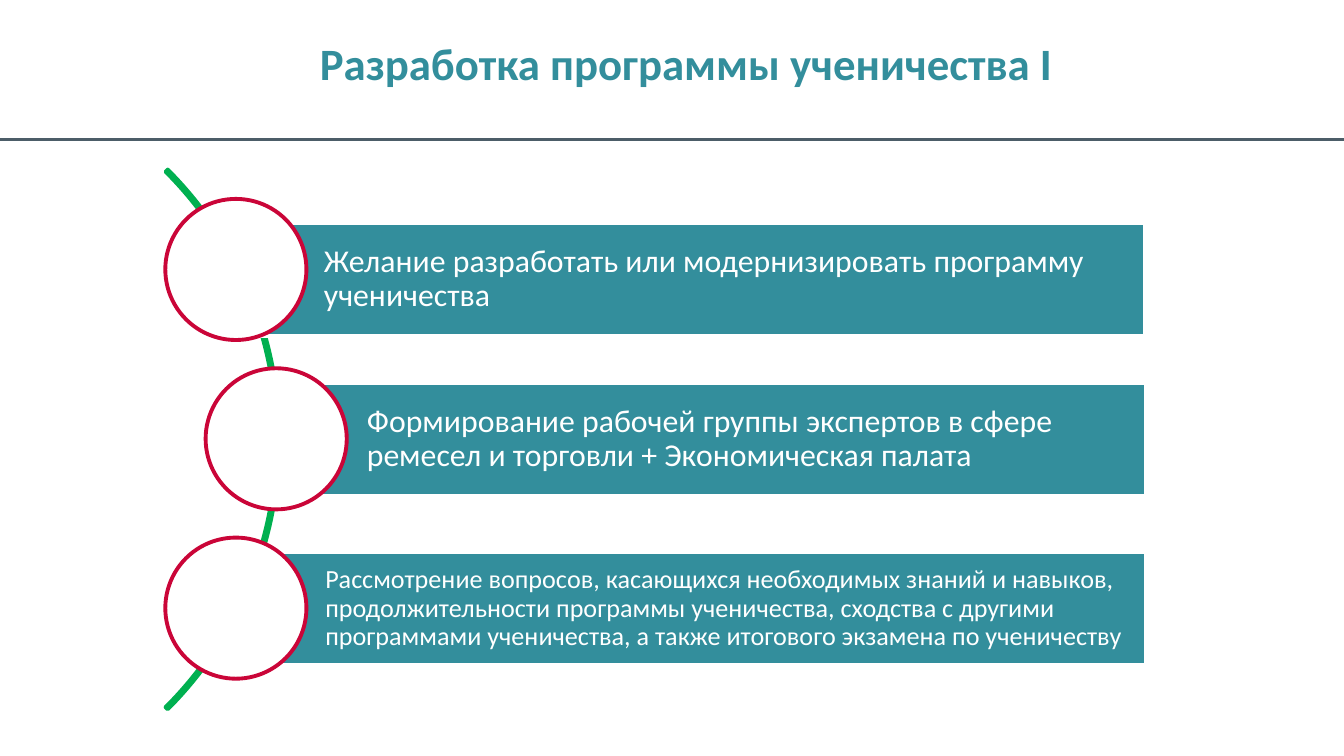
from pptx import Presentation, util as u
from pptx.dml.color import RGBColor
from pptx.enum import shapes, text
from pptx.oxml.ns import qn
from lxml import etree


def rgb(value):
    return RGBColor.from_string(value)


class SlideBuilder:
    FONT = "Calibri"
    TEAL, WHITE, RED, GREEN, GREY = "338E9C", "FFFFFF", "CA0538", "00B050", "4C5D68"
    OUTLINE = 2.08

    def __init__(self, slide):
        self.slide = slide

    def set_font(self, paragraph, size, color, bold=False):
        font = paragraph.font
        font.name, font.size, font.bold = self.FONT, u.Pt(size), bold
        font.color.rgb = rgb(color)

    def title(self, wording, left, top, width, height):
        heading = self.slide.shapes.title
        heading.left, heading.top = u.Inches(left), u.Inches(top)
        heading.width, heading.height = u.Inches(width), u.Inches(height)
        frame = heading.text_frame
        frame.text = wording
        frame.word_wrap = False
        frame.auto_size = text.MSO_AUTO_SIZE.NONE
        frame.vertical_anchor = text.MSO_ANCHOR.TOP
        frame.margin_left = frame.margin_right = 0
        frame.margin_top = frame.margin_bottom = 0
        paragraph = frame.paragraphs[0]
        paragraph.alignment = text.PP_ALIGN.LEFT
        paragraph.line_spacing = u.Pt(30)
        self.set_font(paragraph, 24, self.TEAL, bold=True)

    def rule(self, y):
        """Draw a horizontal line across the slide."""
        line = self.slide.shapes.add_connector(
            shapes.MSO_CONNECTOR.STRAIGHT,
            u.Inches(10), u.Inches(y), u.Inches(0), u.Inches(y))
        line.line.color.rgb = rgb(self.GREY)
        line.line.width = u.Pt(1.5)
        etree.SubElement(line._element.spPr, qn("a:effectLst"))

    def shape(self, kind, left, top, width, height, fill, outline):
        item = self.slide.shapes.add_shape(
            kind, u.Inches(left), u.Inches(top), u.Inches(width), u.Inches(height))
        item.shadow.inherit = False
        if fill:
            item.fill.solid()
            item.fill.fore_color.rgb = rgb(fill)
        else:
            item.fill.background()
        item.line.color.rgb = rgb(outline)
        item.line.width = u.Pt(self.OUTLINE)
        return item

    def arc(self, left, top, diameter):
        arc = self.shape(shapes.MSO_SHAPE.BLOCK_ARC, left, top, diameter, diameter,
                         None, self.GREEN)
        # Start angle, end angle (315 and 45 degrees) and band thickness
        for index, value in enumerate((189, 27, 0.004)):
            arc.adjustments[index] = value

    def bar(self, wording, left, top, width, size, margin):
        bar = self.shape(shapes.MSO_SHAPE.RECTANGLE, left, top, width, 0.84,
                         self.TEAL, self.WHITE)
        frame = bar.text_frame
        frame.text = wording
        frame.word_wrap = True
        frame.vertical_anchor = text.MSO_ANCHOR.MIDDLE
        frame.margin_left = u.Inches(0.67)
        frame.margin_right = frame.margin_top = frame.margin_bottom = u.Inches(margin)
        paragraph = frame.paragraphs[0]
        paragraph.alignment = text.PP_ALIGN.LEFT
        paragraph.line_spacing = 0.9
        self.set_font(paragraph, size, self.WHITE)

    def circle(self, left, top):
        self.shape(shapes.MSO_SHAPE.OVAL, left, top, 1.05, 1.05, self.WHITE, self.RED)


# Wording, bar left, bar top, bar width, text size, margin, circle left
STEPS = [
    ("Желание разработать или модернизировать программу ученичества",
     1.74, 1.66, 6.78, 17, 0.05, 1.23),
    ("Формирование рабочей группы экспертов в сфере ремесел и торговли "
     "+ Экономическая палата",
     2.06, 2.85, 6.47, 17, 0.05, 1.53),
    ("Рассмотрение вопросов, касающихся необходимых знаний и навыков, "
     "продолжительности программы ученичества, сходства с другими программами "
     "ученичества, а также итогового экзамена по ученичеству",
     1.75, 4.11, 6.78, 14, 0.04, 1.23),
]
CIRCLE_TOP, CIRCLE_MIDDLE_TOP = 1.48, 2.74
CIRCLE_STEP = CIRCLE_MIDDLE_TOP - CIRCLE_TOP


def main():
    deck = Presentation()
    deck.slide_width = u.Inches(10)
    deck.slide_height = deck.slide_width * 9 // 16
    title_only = deck.slide_layouts[5]
    builder = SlideBuilder(deck.slides.add_slide(title_only))

    builder.rule(1.04)
    builder.arc(-3.6, 0.43, 5.68)
    for number, (wording, left, top, width, size, margin, circle_left) in enumerate(STEPS):
        builder.bar(wording, left, top, width, size, margin)
        builder.circle(circle_left, CIRCLE_TOP + number * CIRCLE_STEP)
    builder.title("Разработка программы ученичества I", 2.38, 0.25, 5.55, 0.68)

    deck.save("out.pptx")


if __name__ == "__main__":
    main()
